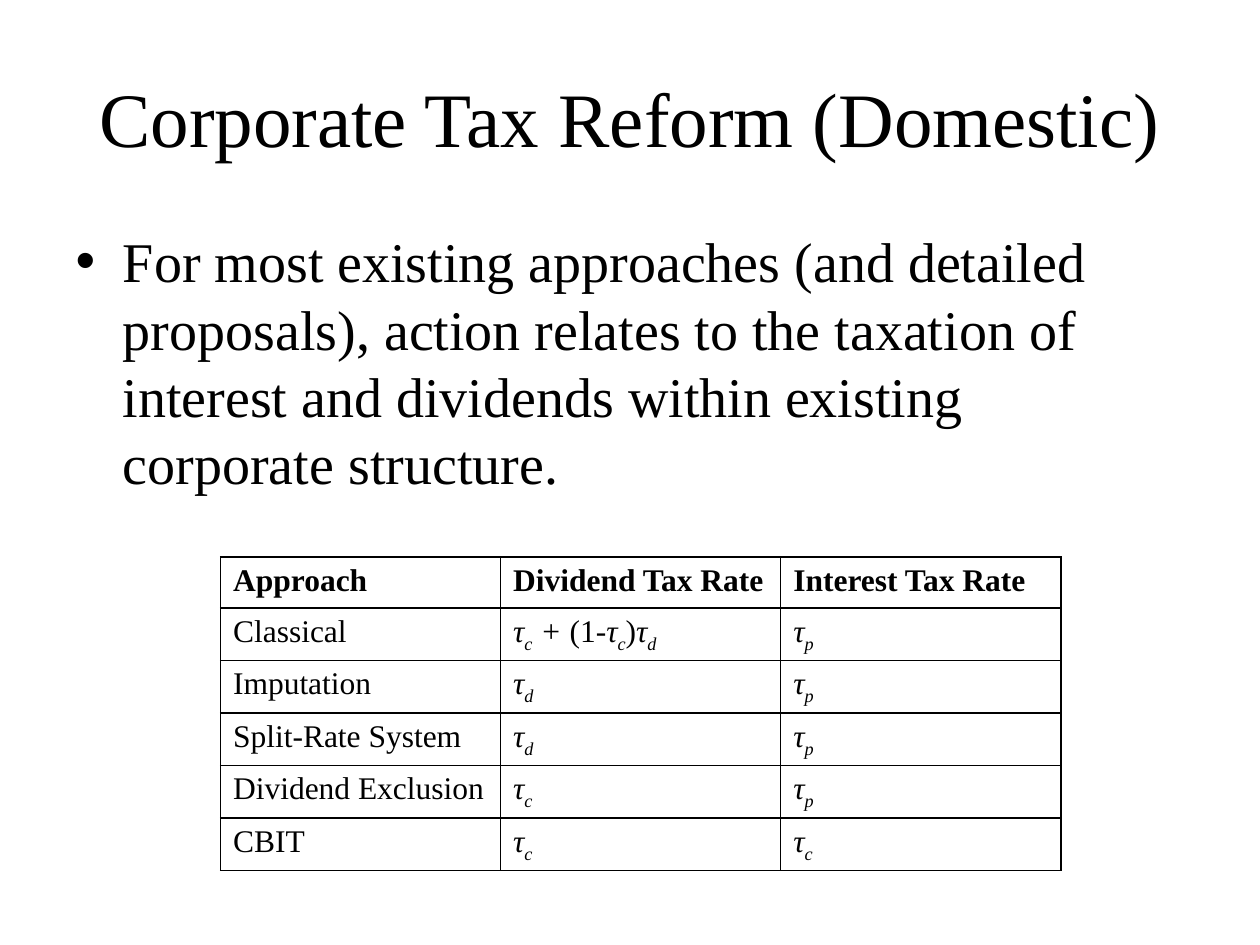
from lxml import etree
from pptx import Presentation
from pptx.dml.color import RGBColor
from pptx.enum import text
from pptx.oxml import ns
from pptx.util import Inches, Pt

BLACK = RGBColor(0, 0, 0)
WHITE = RGBColor(255, 255, 255)
FONT = "Times New Roman"
TITLE = "Corporate Tax Reform (Domestic)"
POINT = (
    "For most existing approaches (and detailed proposals), action relates to "
    "the taxation of interest and dividends within existing corporate structure."
)
HEADINGS = ["Approach", "Dividend Tax Rate", "Interest Tax Rate"]
CLASSICAL_RATE = ["τc", " + ", "(1-", "τc", ")", "τd"]
RATES = [
    ("Classical", CLASSICAL_RATE, ["τp"]),
    ("Imputation", ["τd"], ["τp"]),
    ("Split-Rate System", ["τd"], ["τp"]),
    ("Dividend Exclusion", ["τc"], ["τp"]),
    ("CBIT", ["τc"], ["τc"]),
]


def add_span(para, words, size, subscript=False, **formats):
    """Append a run in the slide's font with the given format values."""
    span = para.add_run()
    span.text = words
    span.font.color.rgb = BLACK
    for name, value in dict(name=FONT, size=Pt(size), **formats).items():
        setattr(span.font, name, value)
    if subscript:
        span._r.get_or_add_rPr().set("baseline", "-25000")


def fill_placeholder(box, words, size, place, anchor):
    """Move a placeholder and give it one paragraph of text."""
    for name, value in zip(("left", "top", "width", "height"), place):
        setattr(box, name, Inches(value))
    box.text_frame.auto_size = text.MSO_AUTO_SIZE.NONE
    box.text_frame.vertical_anchor = anchor
    add_span(box.text_frame.paragraphs[0], words, size)


def add_formula(para, pieces):
    """Write tax rate symbols with their subscripts and operators."""
    for piece in pieces:
        if piece.startswith("τ"):
            add_span(para, "τ", 18, italic=True)
            add_span(para, piece[1:], 18, subscript=True, italic=True)
        else:
            add_span(para, piece, 18, italic=piece == " + ")


def style_cell(cell):
    """Give a cell a white fill and thin black borders."""
    properties = cell._tc.get_or_add_tcPr()
    for side in ("lnL", "lnR", "lnT", "lnB"):
        line = etree.SubElement(properties, ns.qn(f"a:{side}"), w=str(Pt(1)))
        paint = etree.SubElement(line, ns.qn("a:solidFill"))
        etree.SubElement(paint, ns.qn("a:srgbClr"), val=str(BLACK))
    cell.fill.solid()
    cell.fill.fore_color.rgb = WHITE


def add_rate_table(page):
    """Add the table of tax rates by approach."""
    rows = [HEADINGS, *RATES]
    place = map(Inches, (1.75, 4.42, 6.67, 2.43))
    table = page.shapes.add_table(len(rows), len(HEADINGS), *place).table
    for row_number, row in enumerate(rows):
        for column_number, content in enumerate(row):
            cell = table.cell(row_number, column_number)
            style_cell(cell)
            para = cell.text_frame.paragraphs[0]
            if isinstance(content, str):
                add_span(para, content, 18, bold=row_number == 0)
            else:
                add_formula(para, content)


def main():
    """Build the slide and save the deck."""
    deck = Presentation()
    deck.slide_width, deck.slide_height = Inches(10), Inches(7.5)
    page = deck.slides.add_slide(deck.slide_layouts[1])
    title, body = page.placeholders
    fill_placeholder(title, TITLE, 44, (0.5, 0.3, 9, 1.25), text.MSO_ANCHOR.MIDDLE)
    fill_placeholder(body, POINT, 32, (0.5, 1.75, 9, 5.08), text.MSO_ANCHOR.TOP)
    add_rate_table(page)
    deck.save("out.pptx")


if __name__ == "__main__":
    main()
